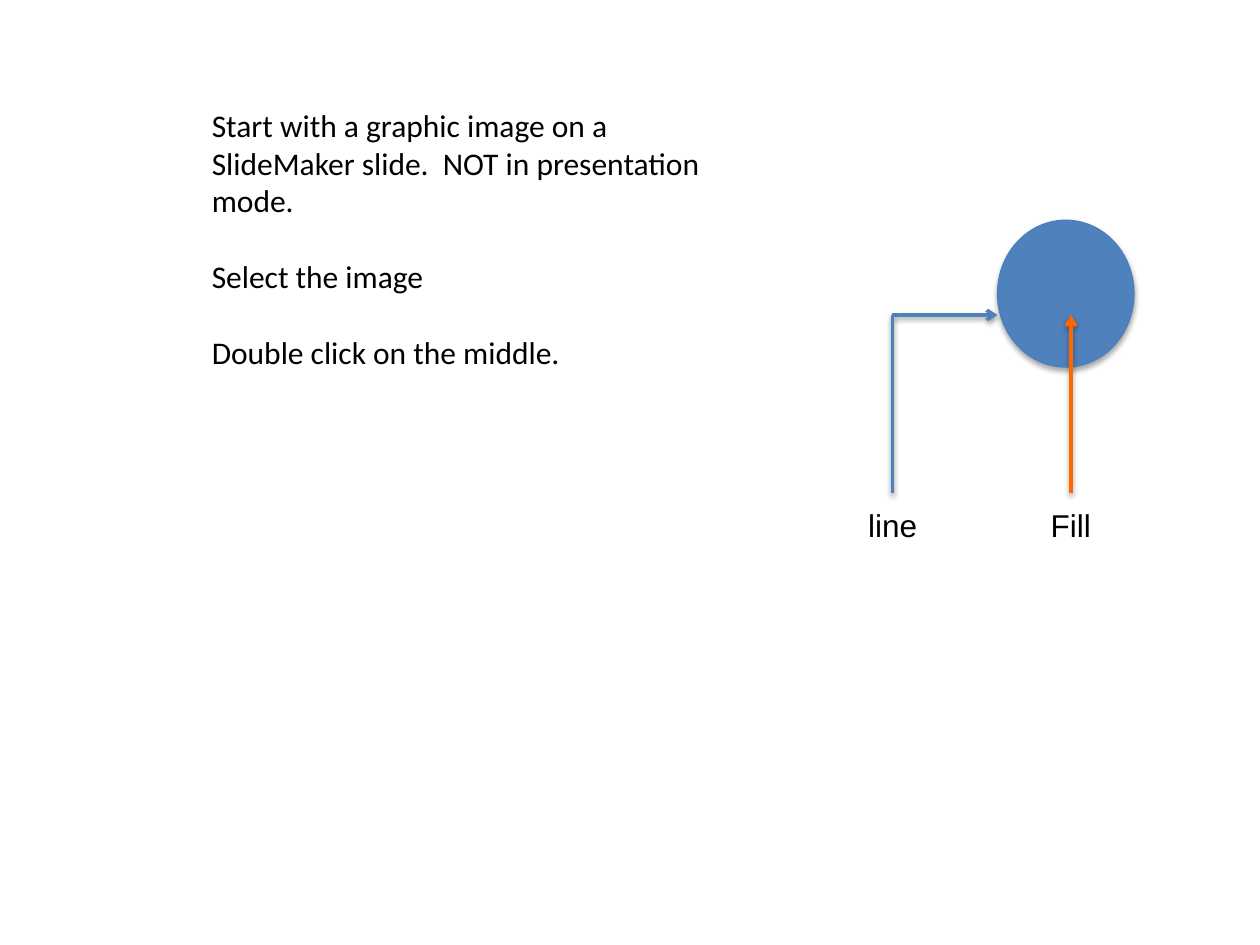
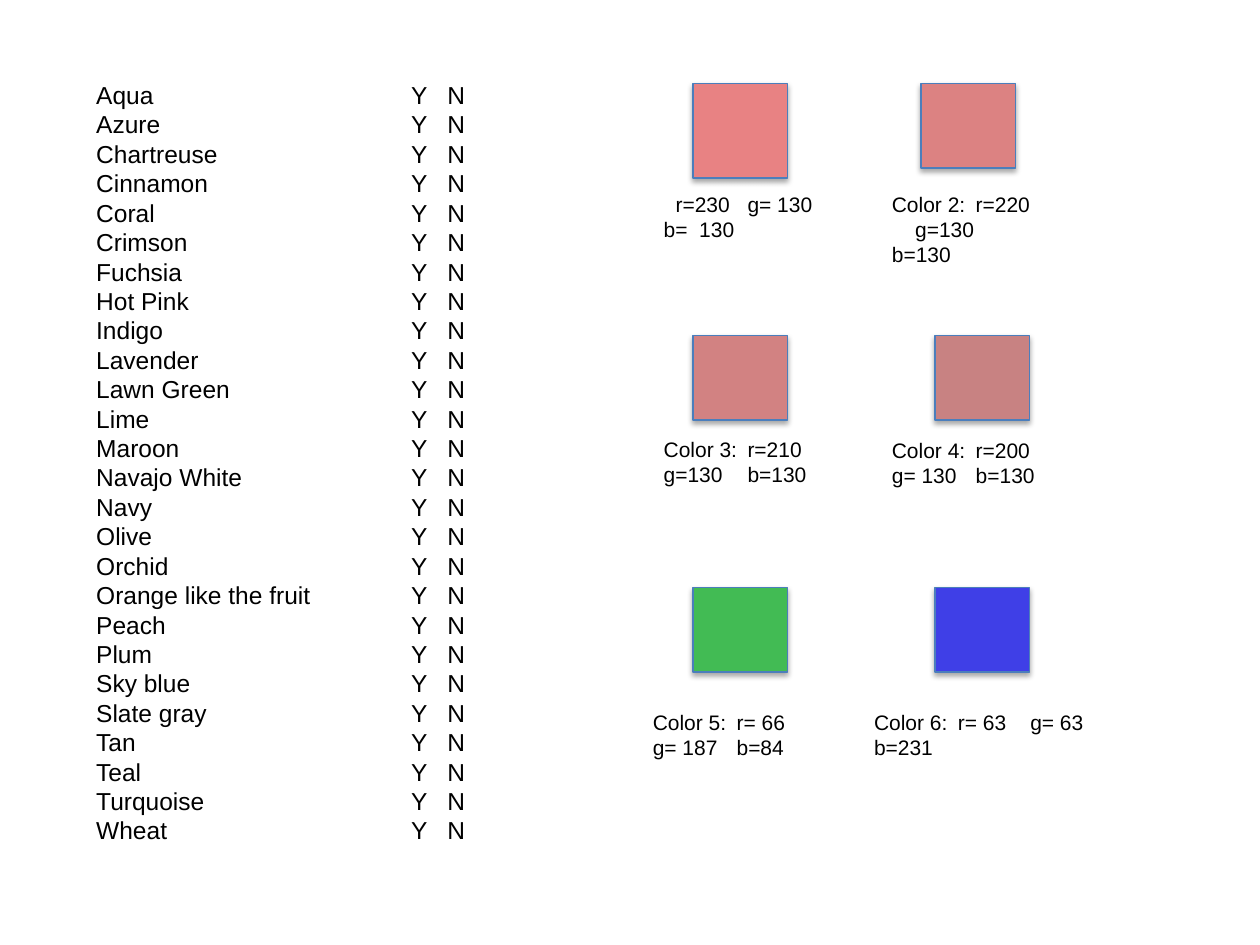
from dataclasses import dataclass

from lxml.etree import SubElement
from pptx import Presentation
from pptx.dml.color import RGBColor
from pptx.enum.shapes import MSO_CONNECTOR, MSO_SHAPE
from pptx.enum.text import MSO_AUTO_SIZE as AutoSize
from pptx.oxml.ns import qn
from pptx.util import Cm, Pt


@dataclass(frozen=True)
class Theme:
    text: str = "000000"
    blue: str = "4F81BD"
    outline: str = "4B7EBC"
    orange: str = "FF6600"
    heading_font: str = "Calibri"
    body_font: str = "Arial"
    large: float = 18
    medium: float = 14
    small: float = 12
    leading: float = 1.2
    outline_width: float = 0.75
    arrow_width: float = 2


@dataclass(frozen=True)
class Swatch:
    fill: str
    caption: str
    left: float
    caption_left: float
    caption_drop: float
    caption_width: float
    height: float = 1.7
    indent: float = 0.2


THEME = Theme()

STEPS = (
    "Start with a graphic image on a SlideMaker slide.  NOT in presentation mode.",
    "Select the image",
    "Double click on the middle.",
)

COLOR_NAMES = (
    "Aqua", "Azure", "Chartreuse", "Cinnamon", "Coral", "Crimson", "Fuchsia",
    "Hot Pink", "Indigo", "Lavender", "Lawn Green", "Lime", "Maroon",
    "Navajo White", "Navy", "Olive", "Orchid", "Orange like the fruit",
    "Peach", "Plum", "Sky blue", "Slate gray", "Tan", "Teal", "Turquoise",
    "Wheat",
)

SWATCHES = (
    Swatch("E88283", "\tr=230\tg= 130\vb=  130", 1.07, 0.23, 2.04, 3.84, height=1.9, indent=0.24),
    Swatch("DC8282", "Color 2:\tr=220\v\tg=130\vb=130", 5.67, 4.83, 2.04, 3.38, indent=0.47),
    Swatch("D28282", "Color 3:\tr=210\vg=130\tb=130", 1.07, 0.23, 1.9, 4.24),
    Swatch("C88282", "Color 4:\tr=200\vg= 130\tb=130", 5.95, 4.83, 1.93, 3.81),
    Swatch("42BB54", "Color 5:\tr= 66\vg= 187\tb=84", 1.07, 0.01, 2.32, 4.01),
    Swatch("3F3FE7", "Color 6:\tr= 63\tg= 63\vb=231", 5.95, 4.47, 2.32, 5.08),
)


def rgb(color):
    return RGBColor.from_string(color)


def cast_shadow(part, distance, opacity):
    properties = part._element.spPr
    effects = properties.find(qn("a:effectLst"))
    if effects is None:
        effects = SubElement(properties, qn("a:effectLst"))
    shadow = SubElement(
        effects, qn("a:outerShdw"), blurRad="40000", dist=str(Pt(distance)),
        dir="5400000", rotWithShape="0",
    )
    black = SubElement(shadow, qn("a:srgbClr"), val="000000")
    SubElement(black, qn("a:alpha"), val=str(opacity * 1000))


def add_text(shapes, text, left, top, width, height, *, size, font=THEME.body_font,
             wrap=True, gap=0, stops=()):
    box = shapes.add_textbox(Cm(left), Cm(top), Cm(width), Cm(height))
    frame = box.text_frame
    frame.word_wrap = wrap
    frame.auto_size = AutoSize.SHAPE_TO_FIT_TEXT
    for number, line in enumerate([text] if isinstance(text, str) else text):
        paragraph = frame.add_paragraph() if number else frame.paragraphs[0]
        paragraph.text = line
        paragraph.line_spacing = Pt(size * THEME.leading)
        paragraph.space_before = Pt(gap if number else 0)
        paragraph.font.size = Pt(size)
        for run in paragraph.runs:
            run.font.size = Pt(size)
            run.font.name = font
            run.font.color.rgb = rgb(THEME.text)
        if stops:
            tabs = SubElement(paragraph._p.get_or_add_pPr(), qn("a:tabLst"))
            for stop in stops:
                SubElement(tabs, qn("a:tab"), pos=str(Cm(stop)), algn="l")
    return box


def add_filled(shapes, kind, fill, left, top, width, height):
    shape = shapes.add_shape(kind, Cm(left), Cm(top), Cm(width), Cm(height))
    shape.fill.solid()
    shape.fill.fore_color.rgb = rgb(fill)
    shape.line.color.rgb = rgb(THEME.outline)
    shape.line.width = Pt(THEME.outline_width)
    shape.shadow.inherit = False
    cast_shadow(shape, 1.8, 35)


def add_stroke(shapes, color, start, end, arrow=False):
    stroke = shapes.add_connector(MSO_CONNECTOR.STRAIGHT, *map(Cm, start + end))
    stroke.line.color.rgb = rgb(color)
    stroke.line.width = Pt(THEME.arrow_width)
    if arrow:
        SubElement(stroke.line._get_or_add_ln(), qn("a:tailEnd"), type="arrow")
    cast_shadow(stroke, 1.6, 38)


def draw_steps(slide, left, top, width, height):
    add_text(slide.shapes, STEPS, left, top, width, height, size=THEME.large,
             font=THEME.heading_font, gap=THEME.large * THEME.leading)


def draw_circle_diagram(slide, left, top):
    circle_left = left + 2.86
    tip, foot, label_top = top + 1.91, top + 5.5, top + 5.63
    line_x, fill_x = left + 0.74, left + 4.34

    add_filled(slide.shapes, MSO_SHAPE.OVAL, THEME.blue, circle_left, top, 2.75, 2.96)

    line_group = slide.shapes.add_group_shape().shapes
    add_stroke(line_group, THEME.blue, (line_x, tip), (circle_left, tip), arrow=True)
    add_stroke(line_group, THEME.blue, (line_x, tip), (line_x, foot))
    add_text(line_group, "line", left, label_top, 1.52, 1.02, size=THEME.large, wrap=False)

    fill_group = slide.shapes.add_group_shape().shapes
    add_stroke(fill_group, THEME.orange, (fill_x, foot), (fill_x, tip), arrow=True)
    add_text(fill_group, "Fill", left + 3.68, label_top, 1.35, 1.02,
             size=THEME.large, wrap=False)


def draw_color_list(slide, left, top, width, height):
    rows = [f"{name}\tY\tN" for name in COLOR_NAMES]
    add_text(slide.shapes, rows, left, top, width, height,
             size=THEME.medium, stops=(6.35, 7.08))


def draw_swatches(slide, left, top, row_pitch):
    for number, swatch in enumerate(SWATCHES):
        row_top = top + number // 2 * row_pitch
        add_filled(slide.shapes, MSO_SHAPE.RECTANGLE, swatch.fill,
                   left + swatch.left, row_top, 1.9, swatch.height)
        add_text(slide.shapes, swatch.caption, left + swatch.caption_left,
                 row_top + swatch.caption_drop, swatch.caption_width, 1.27,
                 size=THEME.small, stops=(swatch.indent, 1.69, 3.15))


def main():
    deck = Presentation()
    deck.slide_width, deck.slide_height = Cm(25.4), Cm(19.05)
    blank = deck.slide_layouts[6]

    instructions = deck.slides.add_slide(blank)
    draw_steps(instructions, 4.02, 2.01, 11.23, 6.4)
    draw_circle_diagram(instructions, 17.25, 4.44)

    colors = deck.slides.add_slide(blank)
    draw_color_list(colors, 1.69, 1.49, 8.46, 16.41)
    draw_swatches(colors, 12.9, 1.69, 5.08)

    deck.save("out.pptx")


if __name__ == "__main__":
    main()
